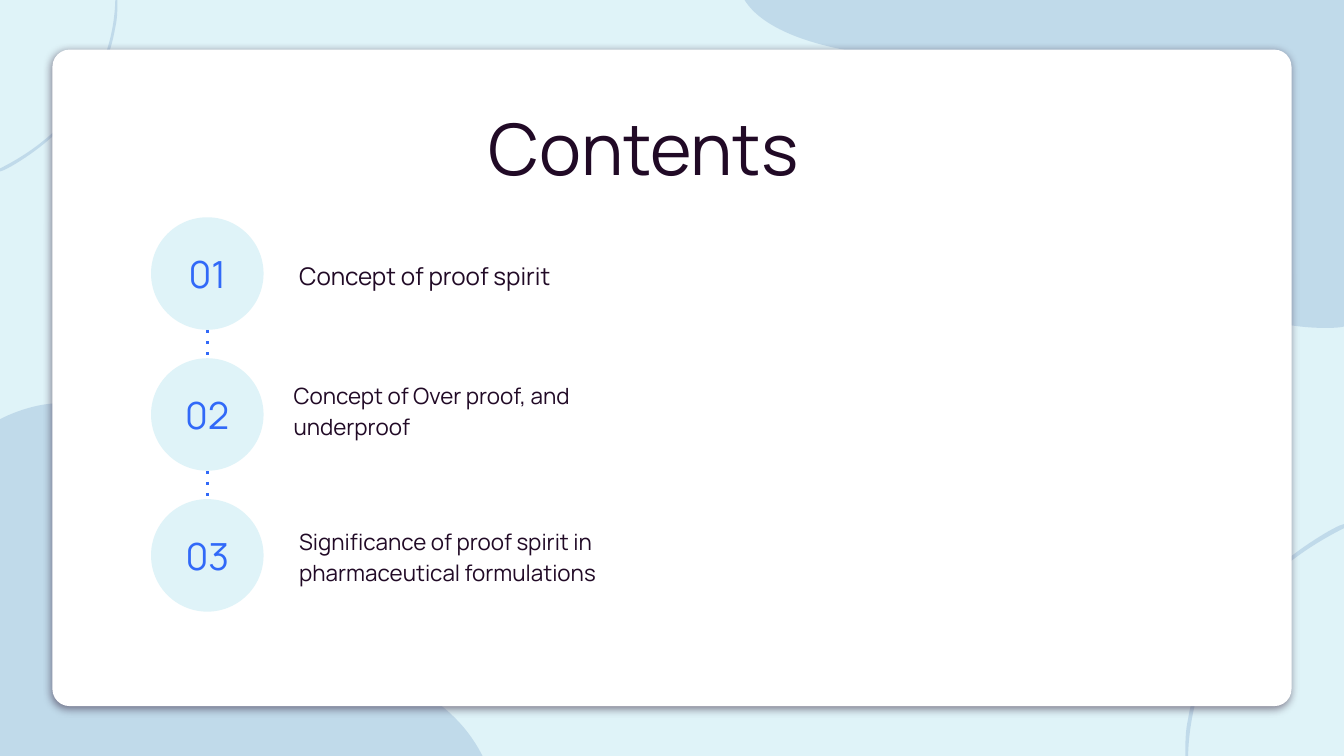
"""Build a contents slide with three numbered topics on a white card."""
from lxml.etree import SubElement as Sub
from pptx import Presentation
from pptx.dml.color import RGBColor as RGB
from pptx.enum.shapes import MSO_CONNECTOR as Link, MSO_SHAPE as Kind
from pptx.enum.text import MSO_ANCHOR as Anchor, PP_ALIGN as Align
from pptx.oxml.ns import qn
from pptx.util import Pt

PALE, MIST, INK, BLUE, WHITE = "DFF3F8", "A0BFDB", "210A26", "3169F8", "FFFFFF"


def paint(fill, color):
    fill.solid()
    fill.fore_color.rgb = RGB.from_string(color)


def write(shape, text, size=12, color=INK, align=Align.LEFT, anchor=Anchor.MIDDLE, gap=1.15):
    frame = shape.text_frame
    frame.word_wrap = True
    frame.vertical_anchor = anchor
    frame.margin_left = frame.margin_right = Pt(7.2)
    frame.margin_top = frame.margin_bottom = Pt(7.2)
    para = frame.paragraphs[0]
    para.alignment = align
    para.line_spacing = gap
    run = para.add_run()
    run.text = text
    run.font.name = "Manrope"
    run.font.size = Pt(size)
    paint(run.font.fill, color)


deck = Presentation()
deck.slide_width, deck.slide_height = Pt(720), Pt(405)
slide = deck.slides.add_slide(deck.slide_layouts[6])
shapes = slide.shapes
paint(slide.background.fill, PALE)

arc = [
    (636.5, 405),
    (637.2, 378.7, 645.8, 352.8, 661, 331.9),
    (676.8, 310.3, 697, 294.5, 720, 283),
    (720, 280.8),
    (717.1, 281.5, 714.9, 283, 712.1, 284.4),
    (693.4, 295.2, 676.8, 308.9, 663.1, 326.2),
    (649.4, 343.4, 640.1, 363.6, 636.5, 385.2),
    (635, 391.7, 635, 398.2, 635, 405),
]
small = [
    tuple((405 - n if i % 2 else 720 - n) * 0.74 for i, n in enumerate(part))
    for part in arc
]
left = [
    (32.4, 216),
    (15.8, 216, 0, 224.6, 0, 224.6),
    (0, 405),
    (258.5, 405),
    (225.4, 339.8, 123.1, 352.1, 80.6, 339.1),
    (38.2, 326.2, 85, 264.2, 61.9, 230.4),
    (54, 219.6, 43.2, 216, 32.4, 216),
]
right = [
    (398.9, 0),
    (410.4, 18.7, 449.3, 31.7, 512.6, 31.7),
    (514.8, 31.7, 517, 31.7, 519.8, 31.7),
    (520.6, 31.7, 521.3, 31.7, 522, 31.7),
    (617, 31.7, 576.7, 114.5, 647.3, 158.4),
    (666, 170.6, 691.2, 175.7, 709.2, 175.7),
    (713.5, 175.7, 717.1, 175.7, 720, 175),
    (720, 0),
]
for outline in (arc, left, right, small):
    ends = [(Pt(part[-2]), Pt(part[-1])) for part in outline]
    pen = shapes.build_freeform(*ends[0])
    pen.add_line_segments(ends[1:], close=True)
    blob = pen.convert_to_shape()
    track = blob._element.spPr.find(".//" + qn("a:path"))
    for edge, part in zip(track.findall(qn("a:lnTo")), outline[1:]):
        if len(part) == 6:
            curve = Sub(track, qn("a:cubicBezTo"))
            for x, y in zip(part[::2], part[1::2]):
                Sub(curve, qn("a:pt"), x=str(Pt(x) - blob.left), y=str(Pt(y) - blob.top))
            track.replace(edge, curve)
    blob.shadow.inherit = False
    blob.line.fill.background()
    paint(blob.fill, MIST)
    tint = blob._element.spPr.find(".//" + qn("a:srgbClr"))
    Sub(tint, qn("a:alpha"), val="48000")

card = shapes.add_shape(Kind.ROUNDED_RECTANGLE, Pt(28.1), Pt(26.6), Pt(663.8), Pt(351.7))
card.adjustments[0] = 0.026
card.shadow.inherit = False
card.line.fill.background()
paint(card.fill, WHITE)
glow = Sub(
    card._element.spPr.find(qn("a:effectLst")), qn("a:outerShdw"),
    blurRad=str(Pt(4.5)), dist=str(Pt(1.5)), dir="5400000", algn="bl", rotWithShape="0",
)
shade = Sub(glow, qn("a:srgbClr"), val=INK)
Sub(shade, qn("a:alpha"), val="50000")

title = shapes.add_textbox(Pt(41), Pt(42), Pt(607.7), Pt(56.2))
write(title, "Contents", size=38, align=Align.CENTER, anchor=Anchor.TOP)

topics = [
    ("Concept of proof spirit", 153.2, 116.6, 13),
    ("Concept of Over proof, and underproof", 150.2, 189, 12),
    ("Significance of proof spirit in pharmaceutical formulations", 153.2, 267.1, 12),
]
disc, pitch = 60.3, 75.5
for i, (text, x, y, size) in enumerate(topics):
    label = shapes.add_textbox(Pt(x), Pt(y), Pt(195.1), Pt(disc))
    write(label, text, size=size)
    top = 116.4 + i * pitch
    badge = shapes.add_shape(Kind.OVAL, Pt(80.9), Pt(top), Pt(disc), Pt(disc))
    badge.shadow.inherit = False
    badge.line.fill.background()
    paint(badge.fill, PALE)
    write(badge, f"{i + 1:02}", size=20, color=BLUE, align=Align.CENTER, gap=1)
    if i < len(topics) - 1:
        link = shapes.add_connector(
            Link.STRAIGHT, Pt(111.05), Pt(top + disc), Pt(111.05), Pt(top + pitch)
        )
        paint(link.line.fill, BLUE)
        link.line.width = Pt(1.5)
        Sub(link._element.spPr.find(qn("a:ln")), qn("a:prstDash"), val="dot")
        Sub(link._element.spPr, qn("a:effectLst"))

deck.save("out.pptx")
